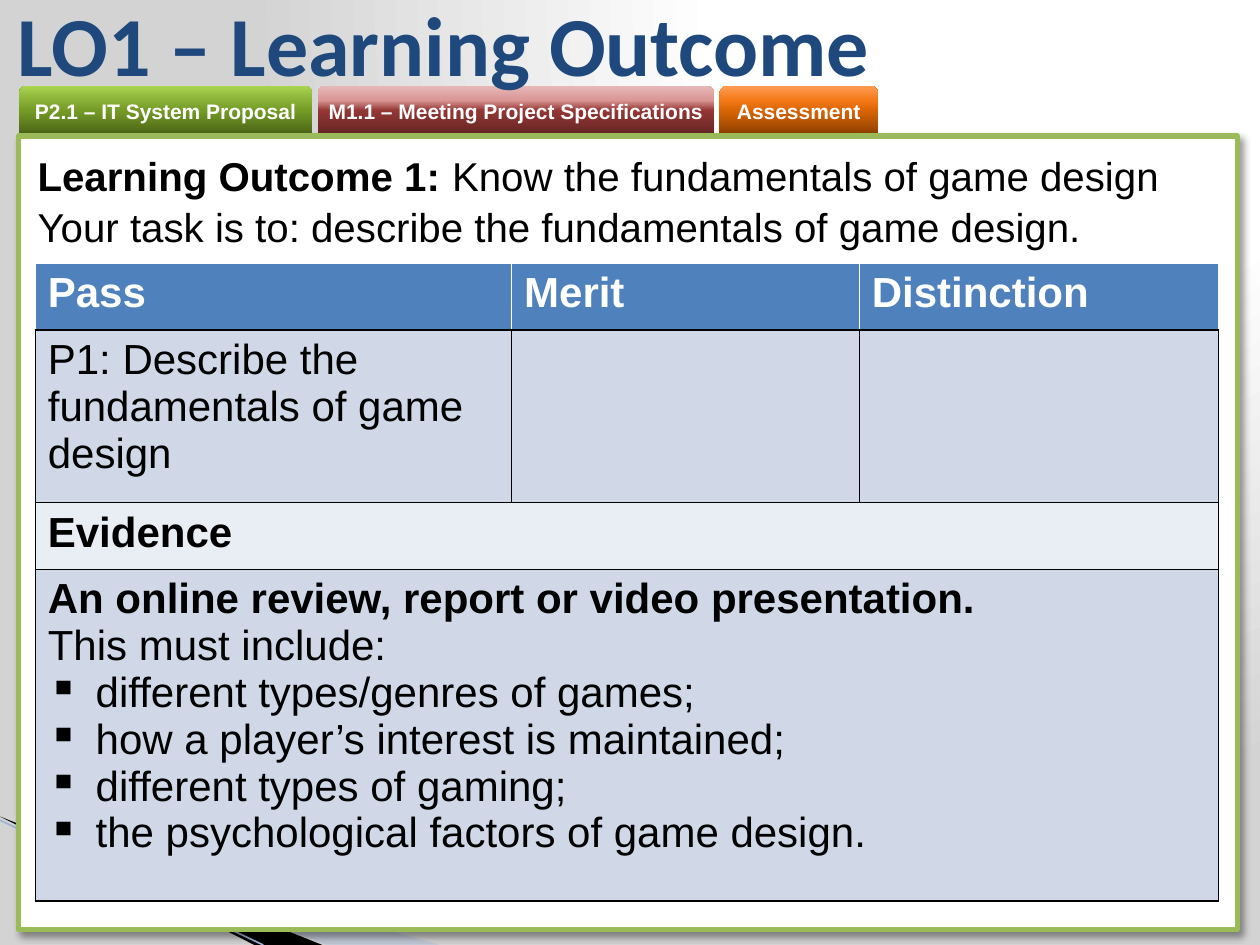
from lxml.etree import SubElement
from pptx import Presentation
from pptx.dml.color import RGBColor
from pptx.enum.shapes import MSO_CONNECTOR, MSO_SHAPE
from pptx.enum.text import MSO_ANCHOR, PP_ALIGN
from pptx.oxml import parse_xml
from pptx.oxml.ns import nsdecls, qn
from pptx.util import Inches, Pt

COLORS = {
    "white": "FFFFFF", "black": "000000", "title": "1F497D", "frame": "9BBB59",
    "header": "4F81BD", "band": "D0D8E8", "pale": "E9EDF4",
    "swoosh": "A7B9DB", "edge": "9EB3D6", "grey": "D3D3D3",
}
TABS = [
    ("P2.1 – IT System Proposal", 23.3, ["4A6316", "769C27", "89B137", "A9D651"]),
    ("M1.1 – Meeting Project Specifications", 31.5, ["632523", "953735", "D99694", "E6B9B8"]),
    ("Assessment", 12.6, ["8B3F00", "DA6606", "F47917", "FF9C54"]),
]
INCLUDES = [
    "different types/genres of games;",
    "how a player’s interest is maintained;",
    "different types of gaming;",
    "the psychological factors of game design.",
]


class Deck:
    """Slide style and drawing methods on a grid of 100 columns by 75 rows."""

    def __init__(self):
        self.prs = Presentation()
        self.prs.slide_width, self.prs.slide_height = Inches(10), Inches(7.5)
        self.s = self.prs.slides.add_slide(self.prs.slide_layouts[5])

    def grid(self, *units):
        return [int(self.prs.slide_width * u / 100) for u in units]

    def rgb(self, name):
        return RGBColor.from_string(COLORS[name])

    def solid(self, fill, name):
        fill.solid()
        fill.fore_color.rgb = self.rgb(name)

    def gradient(self, fill, root, stops, direction):
        fill.gradient()
        grad = root.find(".//" + qn("a:gradFill"))
        for child in list(grad):
            grad.remove(child)
        gs_lst = SubElement(grad, qn("a:gsLst"))
        for pos, color in stops:
            gs = SubElement(gs_lst, qn("a:gs"), pos=str(pos * 1000))
            SubElement(gs, qn("a:srgbClr"), val=color)
        grad.append(parse_xml(direction))

    def background(self, stops):
        circle = (f'<a:path {nsdecls("a")} path="circle">'
                  '<a:fillToRect l="65000" t="0" r="0" b="98000"/></a:path>')
        self.gradient(self.s.background.fill, self.s.element, stops, circle)

    def add_runs(self, tf, paras, size, color, font="Arial", align=PP_ALIGN.LEFT, bullets=None):
        for i, runs in enumerate(paras):
            p = tf.paragraphs[0] if i == 0 else tf.add_paragraph()
            p.alignment = align
            if bullets is not None and i >= bullets:
                pPr = p._p.get_or_add_pPr()
                pPr.set("marL", str(Inches(0.38)))
                pPr.set("indent", str(-Inches(0.38)))
                SubElement(pPr, qn("a:buChar"), char="▪")
            for text, bold in runs:
                r = p.add_run()
                r.text = text
                r.font.size, r.font.name, r.font.bold = Pt(size), font, bold
                r.font.color.rgb = self.rgb(color)

    def title(self, text, *box):
        sp = self.s.shapes.title
        sp.left, sp.top, sp.width, sp.height = self.grid(*box)
        sp.text_frame.vertical_anchor = MSO_ANCHOR.MIDDLE
        self.add_runs(sp.text_frame, [[(text, True)]], 48, "title", "Calibri")
        sp.element.getparent().append(sp.element)

    def outline(self, points, color, alpha=100):
        pts = [self.grid(*pt) for pt in points]
        fb = self.s.shapes.build_freeform(*pts[0], scale=1.0)
        fb.add_line_segments(pts[1:], close=True)
        sp = fb.convert_to_shape()
        sp.shadow.inherit = False
        self.solid(sp.fill, color)
        sp.line.fill.background()
        clr = sp.element.spPr.find(".//" + qn("a:srgbClr"))
        SubElement(clr, qn("a:alpha"), val=str(alpha * 1000))

    def line(self, color, width, *ends):
        c = self.s.shapes.add_connector(MSO_CONNECTOR.STRAIGHT, *self.grid(*ends))
        c.line.color.rgb, c.line.width = self.rgb(color), Pt(width)
        SubElement(c.element.spPr, qn("a:effectLst"))

    def tab(self, text, colors, *box):
        sp = self.s.shapes.add_shape(MSO_SHAPE.ROUND_2_SAME_RECTANGLE, *self.grid(*box))
        sp.shadow.inherit = False
        up = f'<a:lin {nsdecls("a")} ang="16200000" scaled="0"/>'
        self.gradient(sp.fill, sp.element, zip((0, 50, 70, 100), colors), up)
        sp.line.fill.background()
        tf = sp.text_frame
        tf.margin_left = tf.margin_right = tf.margin_top = tf.margin_bottom = 0
        tf.vertical_anchor = MSO_ANCHOR.MIDDLE
        self.add_runs(tf, [[(text, True)]], 12, "white", align=PP_ALIGN.CENTER)

    def panel(self, *box):
        sp = self.s.shapes.add_shape(MSO_SHAPE.RECTANGLE, *self.grid(*box))
        self.solid(sp.fill, "white")
        sp.line.color.rgb, sp.line.width = self.rgb("frame"), Pt(3)
        sp.shadow.inherit = False
        shadow = SubElement(sp.element.spPr.find(qn("a:effectLst")), qn("a:outerShdw"),
                            blurRad=str(Pt(4)), dist=str(Pt(3)), dir="2700000", rotWithShape="0")
        clr = SubElement(shadow, qn("a:srgbClr"), val=COLORS["black"])
        SubElement(clr, qn("a:alpha"), val="40000")

    def text(self, paras, size, *box):
        tf = self.s.shapes.add_textbox(*self.grid(*box)).text_frame
        tf.word_wrap = True
        self.add_runs(tf, paras, size, "black")
        for p in tf.paragraphs[1:]:
            p.space_before = Pt(1.5)

    def borders(self, cell, sides):
        tcPr = cell._tc.get_or_add_tcPr()
        for side, color in zip("LRTB", sides):
            ln = SubElement(tcPr, qn(f"a:ln{side}"), w=str(Pt(1)))
            SubElement(SubElement(ln, qn("a:solidFill")), qn("a:srgbClr"), val=COLORS[color])

    def table(self, left, top, cols, rows, fills):
        frame = self.s.shapes.add_table(len(rows), len(cols),
                                        *self.grid(left, top, sum(cols), sum(rows)))
        tbl = frame.table
        tbl.first_row = tbl.horz_banding = False
        for col, width in zip(tbl.columns, self.grid(*cols)):
            col.width = width
        for i, (row, height) in enumerate(zip(tbl.rows, self.grid(*rows))):
            row.height = height
            for cell in row.cells:
                self.borders(cell, ["black" if i else "white"] * 3 + ["black"])
                self.solid(cell.fill, fills[i])
        return tbl


def main():
    d = Deck()
    d.background([(0, COLORS["white"]), (40, COLORS["white"]), (100, COLORS["grey"])])
    d.outline([(0, 64.9), (34.9, 75), (25.9, 75)], "swoosh", 40)
    d.outline([(0, 64.8), (25.6, 75), (20.2, 75)], "black")
    d.line("edge", 0.95, 0, 65.1, 20.9, 75)

    left = 1.5
    for text, width, colors in TABS:
        d.tab(text, colors, left, 6.8, width, 3.9)
        left += width + 0.4
    d.panel(1.5, 10.8, 96.7, 63)
    d.title("LO1 – Learning Outcome", 0.4, 0, 84.3, 6.8)
    d.text([
        [("Learning Outcome 1: ", True), ("Know the fundamentals of game design", False)],
        [("Your task is to: describe the fundamentals of game design.", False)],
    ], 23, 2, 11.5, 94.6, 8.8)

    tbl = d.table(2.8, 20.9, [37.8, 27.6, 28.5], [5.3, 13.7, 5.3, 26.3],
                  ["header", "band", "pale", "band"])
    for i, name in enumerate(["Pass", "Merit", "Distinction"]):
        d.add_runs(tbl.cell(0, i).text_frame, [[(name, True)]], 24, "white")
    for row in (2, 3):
        tbl.cell(row, 0).merge(tbl.cell(row, 2))
    d.add_runs(tbl.cell(1, 0).text_frame,
               [[("P1: Describe the fundamentals of game design", False)]], 24, "black")
    d.add_runs(tbl.cell(2, 0).text_frame, [[("Evidence", True)]], 24, "black")
    evidence = [[("An online review, report or video presentation.", True)],
                [("This must include:", False)]]
    evidence += [[(item, False)] for item in INCLUDES]
    d.add_runs(tbl.cell(3, 0).text_frame, evidence, 24, "black", bullets=2)
    d.prs.save("out.pptx")


if __name__ == "__main__":
    main()
